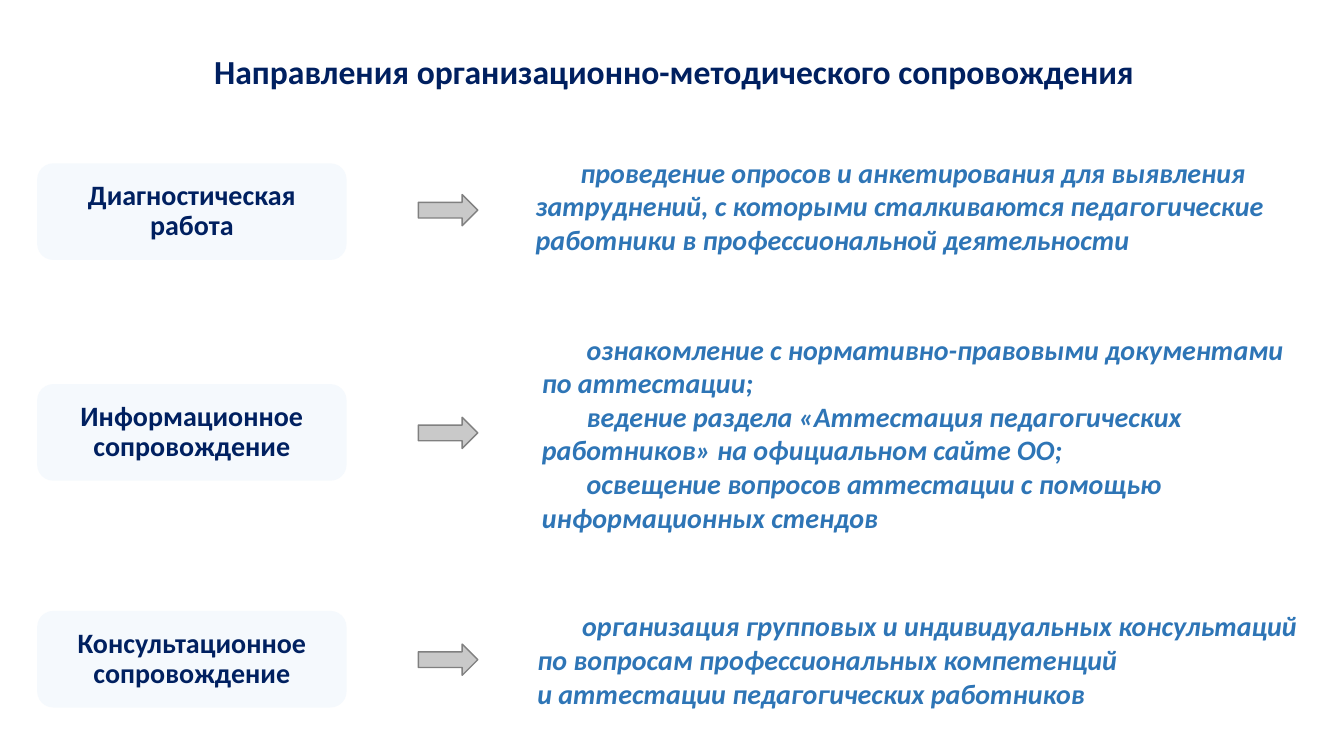
from dataclasses import dataclass

from pptx import Presentation
from pptx.dml.color import RGBColor
from pptx.enum import shapes, text
from pptx.util import Pt

NAVY = RGBColor(0x00, 0x20, 0x60)
BLUE = RGBColor(0x2E, 0x75, 0xB6)
PALE_BLUE = RGBColor(0xF5, 0xF9, 0xFD)
LIGHT_GREY = RGBColor(0xC9, 0xC9, 0xC9)
GREY = RGBColor(0x80, 0x80, 0x80)

FONT = "Calibri"
TEXT_SIZE = 20
FIRST_LINE_INDENT = 32
LABEL_LEFT, LABEL_WIDTH, LABEL_HEIGHT = 26.6, 221, 69
ARROW_LEFT, ARROW_WIDTH, ARROW_HEIGHT = 298.8, 42.5, 22.3
DETAIL_LEFT, DETAIL_WIDTH = 372.2, 568


@dataclass
class Line:
    wording: str
    indented: bool = True


@dataclass
class Direction:
    label: str
    middle: float
    arrow_middle: float
    detail_middle: float
    detail_height: float
    lines: list[Line]


DIRECTIONS = [
    Direction("Диагностическая работа", 151.2, 150.1, 146.9, 69, [
        Line("проведение опросов и анкетирования для выявления затруднений, "
             "с которыми сталкиваются педагогические работники "
             "в профессиональной деятельности"),
    ]),
    Direction("Информационное сопровождение", 308.9, 309.2, 309.2, 160.6, [
        Line("ознакомление с нормативно-правовыми документами"),
        Line("по аттестации;", indented=False),
        Line("ведение раздела «Аттестация педагогических работников» "
             "на официальном сайте ОО;"),
        Line("освещение вопросов аттестации с помощью информационных стендов"),
    ]),
    Direction("Консультационное сопровождение", 470.9, 471.2, 470.9, 93.6, [
        Line("организация групповых и индивидуальных консультаций "
             "по вопросам профессиональных компетенций"),
        Line("и аттестации педагогических работников", indented=False),
    ]),
]


def add_centred_shape(slide, kind, left: float, middle: float,
                      width: float, height: float, fill: RGBColor | None = None):
    """Add a shape, without outline, whose vertical centre is at middle."""
    shape = slide.shapes.add_shape(
        kind, Pt(left), Pt(middle - height / 2), Pt(width), Pt(height))
    shape.shadow.inherit = False
    shape.line.fill.background()
    if fill is None:
        shape.fill.background()
    else:
        shape.fill.solid()
        shape.fill.fore_color.rgb = fill
    frame = shape.text_frame
    frame.word_wrap = True
    frame.vertical_anchor = text.MSO_ANCHOR.MIDDLE
    return shape


def format_paragraph(paragraph, size: float, color: RGBColor, italic: bool = False) -> None:
    font = paragraph.font
    font.name, font.size = FONT, Pt(size)
    font.bold, font.italic = True, italic
    font.color.rgb = color


def format_heading(paragraph, size: float) -> None:
    paragraph.alignment = text.PP_ALIGN.CENTER
    paragraph.line_spacing = 0.9
    format_paragraph(paragraph, size, NAVY)


def add_title(slide, wording: str) -> None:
    title = slide.shapes.title
    title.left, title.top, title.width, title.height = Pt(62.6), Pt(27.4), Pt(838), Pt(51)
    frame = title.text_frame
    frame.text = wording
    frame.auto_size = text.MSO_AUTO_SIZE.NONE
    frame.vertical_anchor = text.MSO_ANCHOR.MIDDLE
    format_heading(frame.paragraphs[0], 24)


def add_direction(slide, direction: Direction) -> None:
    rounded = shapes.MSO_SHAPE.ROUNDED_RECTANGLE

    # Label
    label = add_centred_shape(slide, rounded, LABEL_LEFT, direction.middle,
                              LABEL_WIDTH, LABEL_HEIGHT, PALE_BLUE)
    label.text_frame.text = direction.label
    format_heading(label.text_frame.paragraphs[0], TEXT_SIZE)

    # Arrow
    arrow = add_centred_shape(slide, shapes.MSO_SHAPE.RIGHT_ARROW, ARROW_LEFT,
                              direction.arrow_middle, ARROW_WIDTH, ARROW_HEIGHT, LIGHT_GREY)
    arrow.line.color.rgb = GREY
    arrow.line.width = Pt(1)

    # Details
    detail = add_centred_shape(slide, rounded, DETAIL_LEFT, direction.detail_middle,
                               DETAIL_WIDTH, direction.detail_height)
    frame = detail.text_frame
    frame.text = "\n".join(line.wording for line in direction.lines)
    for paragraph, line in zip(frame.paragraphs, direction.lines):
        paragraph.alignment = text.PP_ALIGN.LEFT
        if line.indented:
            paragraph._p.get_or_add_pPr().set("indent", str(Pt(FIRST_LINE_INDENT)))
        format_paragraph(paragraph, TEXT_SIZE, BLUE, italic=True)


def main() -> None:
    presentation = Presentation()
    presentation.slide_width, presentation.slide_height = Pt(960), Pt(540)
    title_only = presentation.slide_layouts[5]
    slide = presentation.slides.add_slide(title_only)

    add_title(slide, "Направления организационно-методического сопровождения")
    for direction in DIRECTIONS:
        add_direction(slide, direction)

    presentation.save("out.pptx")


if __name__ == "__main__":
    main()
